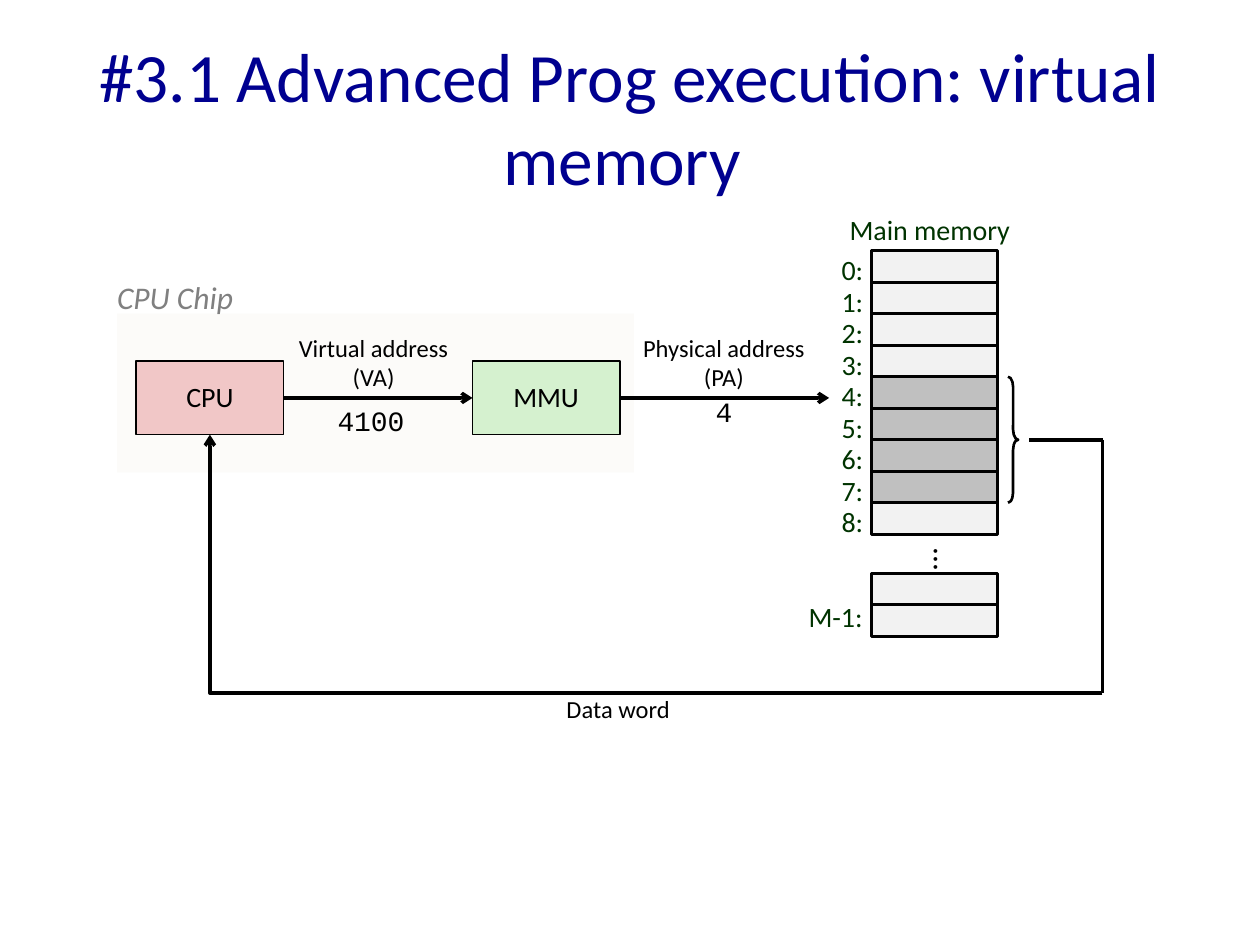
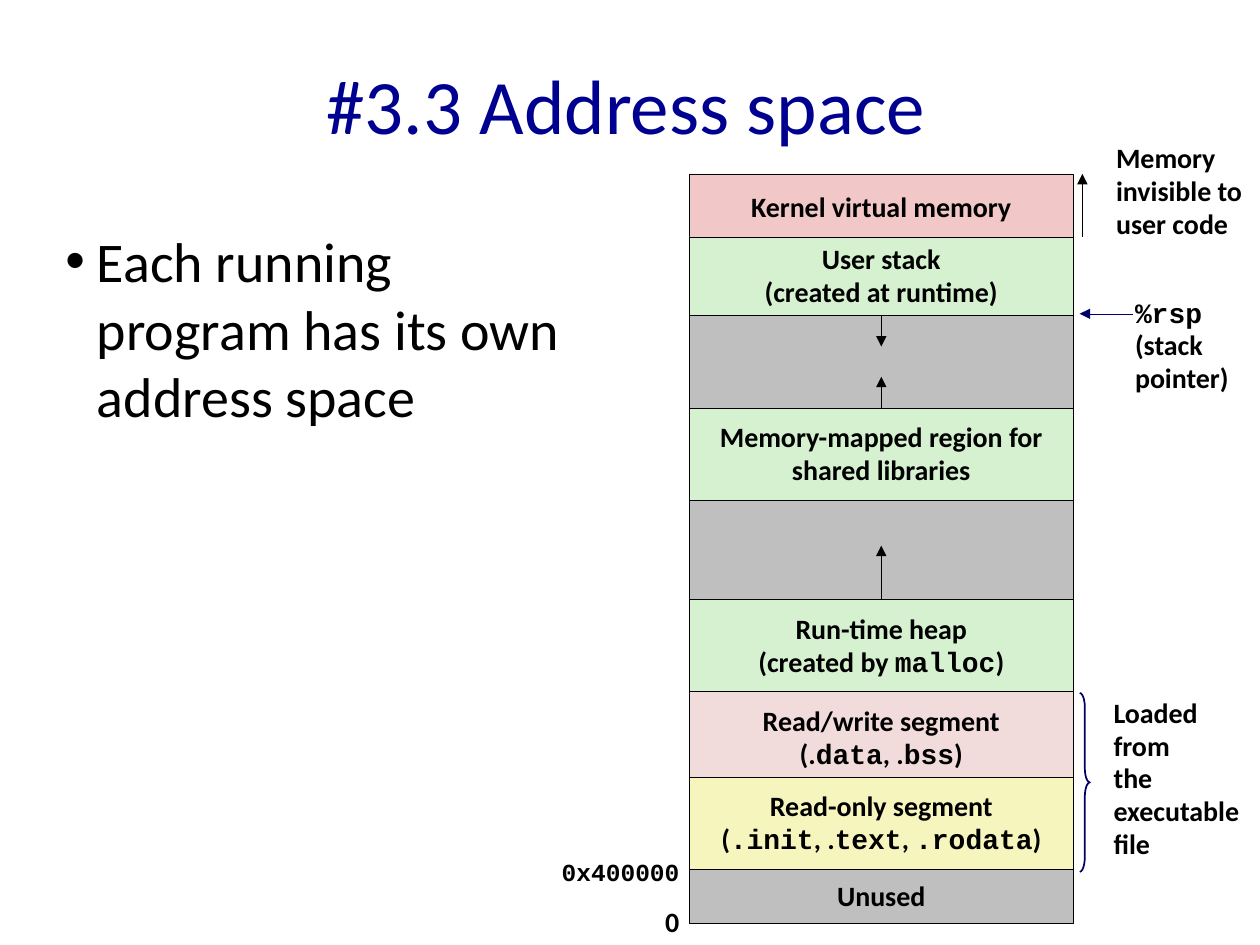
"""Builds two slides on virtual memory and the address space of a program."""
from lxml import etree
from pptx import Presentation
from pptx.dml.color import RGBColor
from pptx.enum.shapes import MSO_CONNECTOR, MSO_SHAPE
from pptx.enum.text import MSO_ANCHOR, MSO_AUTO_SIZE, PP_ALIGN
from pptx.oxml.ns import qn
from pptx.util import Pt

RECT, BRACE = MSO_SHAPE.RECTANGLE, MSO_SHAPE.RIGHT_BRACE
STRAIGHT, ELBOW = MSO_CONNECTOR.STRAIGHT, MSO_CONNECTOR.ELBOW
LEFT, CENTER = PP_ALIGN.LEFT, PP_ALIGN.CENTER
TOP, MIDDLE = MSO_ANCHOR.TOP, MSO_ANCHOR.MIDDLE
GROW, FIXED = MSO_AUTO_SIZE.SHAPE_TO_FIT_TEXT, MSO_AUTO_SIZE.NONE
SIDE_TOP, SIDE_LEFT, SIDE_BOTTOM, SIDE_RIGHT = range(4)
TITLE_AND_BODY, TITLE_ONLY = 1, 5
SANS, MONO = "Calibri", "Courier New"
COLORS = {
    "title": "000090", "ink": "000000", "address": "003300", "note": "808080",
    "pointer": "000066", "chip": "FCFBF9", "cell": "F2F2F2", "word": "C0C0C0",
    "red": "F1C7C7", "green": "D5F1CF", "gap": "BFBFBF", "pink": "F2DCDB",
    "yellow": "F6F5BD",
}


def rgb(name):
    return RGBColor.from_string(COLORS[name])


def write(shape, text, size=16, color="ink", align=LEFT, anchor=TOP, bold=False,
          italic=False, spacing=None, before=None, wrap=False, fit=FIXED):
    """Fill a shape line by line; parts between backticks use the code font."""
    frame = shape.text_frame
    frame.word_wrap, frame.auto_size, frame.vertical_anchor = wrap, fit, anchor
    for number, line in enumerate(text.split("\n")):
        paragraph = frame.add_paragraph() if number else frame.paragraphs[0]
        paragraph.alignment = align
        if spacing:
            paragraph.line_spacing = spacing
        if before is not None:
            paragraph.space_before = Pt(before)
        for part, words in enumerate(line.split("`")):
            if words:
                run = paragraph.add_run()
                run.text = words
                font = run.font
                font.name = MONO if part % 2 else SANS
                font.size, font.bold, font.italic = Pt(size), bold, italic
                font.color.rgb = rgb(color)


def place(shape, box):
    shape.left, shape.top, shape.width, shape.height = map(Pt, box)


class Deck:
    """Holds the presentation style and the current slide."""

    def __init__(self):
        self.show = Presentation()
        self.show.slide_width, self.show.slide_height = Pt(720), Pt(540)
        self.slide = None

    def new_slide(self, layout, title, box, size):
        self.slide = self.show.slides.add_slide(self.show.slide_layouts[layout])
        heading = self.slide.shapes.title
        place(heading, box)
        write(heading, title, size=size, color="title", align=CENTER,
              anchor=MIDDLE, wrap=True)

    def bullets(self, text, box):
        body = self.slide.placeholders[1]
        place(body, box)
        write(body, text, size=32, before=12.5, wrap=True)
        for paragraph in body.text_frame.paragraphs:
            properties = paragraph._p.get_or_add_pPr()
            properties.set("marL", str(Pt(18)))
            properties.set("indent", str(Pt(-18)))

    def block(self, box, fill, text="", line=None, bold=False):
        block = self.slide.shapes.add_shape(RECT, *map(Pt, box))
        block.shadow.inherit = False
        block.fill.solid()
        block.fill.fore_color.rgb = rgb(fill)
        if line:
            block.line.width = Pt(line)
            block.line.color.rgb = rgb("ink")
        else:
            block.line.fill.background()
        if text:
            write(block, text, align=CENTER, anchor=MIDDLE, bold=bold, spacing=0.98)
        return block

    def label(self, box, text, vertical=False, **style):
        label = self.slide.shapes.add_textbox(*map(Pt, box))
        write(label, text, **{"fit": GROW, **style})
        if vertical:
            label.element.txBody.bodyPr.set("vert", "eaVert")

    def brace(self, box, curl, width, color="ink"):
        brace = self.slide.shapes.add_shape(BRACE, *map(Pt, box))
        brace.adjustments[0], brace.adjustments[1] = curl, 0.5
        brace.shadow.inherit = False
        brace.fill.background()
        brace.line.width = Pt(width)
        brace.line.color.rgb = rgb(color)

    def link(self, start, end, width=2, color="ink", head=None, source=None,
             target=None, bent=False):
        """Draw a connector; source and target are (shape, side) pairs."""
        link = self.slide.shapes.add_connector(
            ELBOW if bent else STRAIGHT, *map(Pt, (*start, *end)))
        if source:
            link.begin_connect(*source)
        if target:
            link.end_connect(*target)
        link.line.width = Pt(width)
        link.line.color.rgb = rgb(color)
        properties = link.element.spPr
        if bent:
            properties.find(qn("a:prstGeom")).set("prst", "bentConnector2")
        if head:
            etree.SubElement(properties.find(qn("a:ln")), qn("a:tailEnd")).set("type", head)
        etree.SubElement(properties, qn("a:effectLst"))


def virtual_memory(deck):
    deck.new_slide(TITLE_ONLY, "#3.1 Advanced Prog execution: virtual memory ",
                   (36, 21.6, 648, 90), 39.6)
    deck.block((67, 179.3, 295.2, 90.7), "chip")
    cpu = deck.block((77.9, 206.4, 84.2, 42), "red", "CPU", line=1)
    mmu = deck.block((270, 206.4, 84.2, 42), "green", "MMU", line=1)

    memory_left, memory_top, cell_height = 498.2, 143.3, 18
    address_style = dict(color="address", spacing=0.88, before=6)
    for address in range(9):
        top = memory_top + address * cell_height
        deck.block((memory_left, top, 72, cell_height),
                   "word" if 4 <= address <= 7 else "cell", line=1.5)
        deck.label((473.8, top, 26.6, 23.8), f"{address}:", **address_style)
    for top in (327.6, 327.6 + cell_height):
        deck.block((memory_left, top, 72, cell_height), "cell", line=1.5)
    deck.label((455, 341.3, 46.1, 23.8), "M-1:", **address_style)
    deck.label((476.6, 120.2, 109.4, 23.8), "Main memory", align=CENTER, **address_style)

    centered = dict(align=CENTER, anchor=MIDDLE, spacing=0.98)
    deck.label((504, 306, 72, 18), "...", vertical=True, size=18, fit=FIXED, **centered)
    deck.label((162, 187.2, 103, 41), "Virtual address\n(VA)", size=14, **centered)
    deck.label((358.6, 187.2, 110.2, 41), "Physical address\n(PA)", size=14, **centered)
    deck.label((315.4, 393.8, 75.6, 23.8), "Data word", size=14, **centered)
    deck.label((59.8, 155.5, 83.5, 28.8), "CPU Chip", size=18, color="note", italic=True)
    deck.label((401.8, 221.8, 24.5, 26.6), "`4`")
    deck.label((185.8, 226.8, 53.3, 26.6), "`4100`")

    deck.brace((576, 215.3, 5.8, 72), 1, 1.5)
    deck.link((162, 227.4), (270, 227.4), head="arrow",
              source=(cpu, SIDE_RIGHT), target=(mmu, SIDE_LEFT))
    deck.link((354.2, 227.4), (473.8, 227.4), head="arrow", source=(mmu, SIDE_RIGHT))
    deck.link((588.2, 251.3), (630, 251.3))
    deck.link((630, 251.3), (630, 396))
    deck.link((630, 396), (120, 248.4), head="arrow", bent=True)


def address_space(deck):
    deck.new_slide(TITLE_AND_BODY, "#3.3 Address space", (31.7, 28.1, 652.3, 61.9), 44)
    deck.bullets("Each running program has its own address space",
                 (30.2, 126, 311.8, 376.6))

    segments = {}
    for name, top, height, fill, text in (
        ("kernel", 99.4, 38.2, "red", "Kernel virtual memory"),
        ("stack gap", 162, 71.3, "gap", ""),
        ("stack", 135.4, 44.6, "green", "User stack\n(created at runtime)"),
        ("libraries", 233.3, 52.6, "green", "Memory-mapped region for\nshared libraries"),
        ("heap gap", 285.8, 56.9, "gap", ""),
        ("heap", 342.7, 52.6, "green", "Run-time heap\n(created by `malloc`)"),
        ("data", 395.3, 52.6, "pink", "Read/write segment\n(.`data`, .`bss`)"),
        ("code", 444.2, 52.6, "yellow",
         "Read-only segment\n(`.init`, .`text`, `.rodata`)"),
        ("unused", 496.8, 31, "gap", "Unused"),
    ):
        segments[name] = deck.block((393.8, top, 219.6, height), fill, text,
                                    line=0.25, bold=True)

    middle = 503.6
    for name, side, start, end in (
        ("stack", SIDE_BOTTOM, 180, 198),
        ("libraries", SIDE_TOP, 233.3, 215.3),
        ("heap", SIDE_TOP, 342.7, 311.8),
    ):
        deck.link((middle, start), (middle, end), width=0.25, head="triangle",
                  source=(segments[name], side))
    deck.link((618.5, 135.4), (618.5, 99.4), width=0.25, head="triangle")
    deck.link((647.3, 179.3), (617, 179.3), width=0.25, color="pointer", head="triangle")
    deck.brace((617, 396, 5.8, 102.2), 1.42, 1, "pointer")

    for box, text, size, spacing in (
        ((630.7, 77.8, 90.7, 64.1), "Memory\ninvisible to\nuser code", 16, 0.98),
        ((641.5, 166.3, 68.4, 63.4), "`%rsp`\n(stack\npointer)", 16, 0.97),
        ((629.3, 394.6, 90.7, 102.2), "Loaded\nfrom\nthe\nexecutable\nfile", 16, 0.98),
        ((313.9, 487.4, 82.1, 23.8), "`0x400000`", 14, 0.94),
        ((373, 514.1, 22.3, 26.6), "0", 16, 0.98),
    ):
        deck.label(box, text, size=size, bold=True, spacing=spacing)


def main():
    deck = Deck()
    virtual_memory(deck)
    address_space(deck)
    deck.show.save("out.pptx")


if __name__ == "__main__":
    main()
